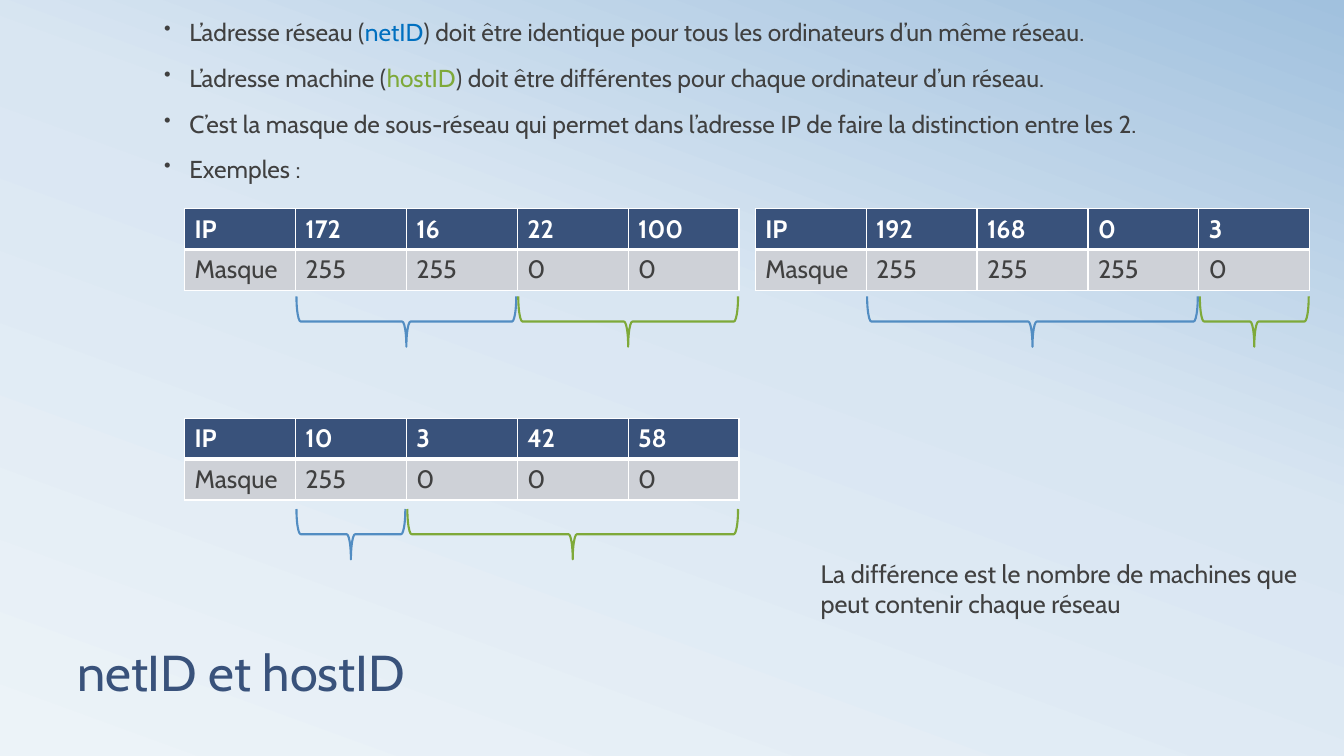
from copy import deepcopy

from lxml.etree import SubElement
from pptx import Presentation
from pptx.dml.color import RGBColor
from pptx.enum.shapes import MSO_SHAPE as Shape
from pptx.enum.text import MSO_ANCHOR as Anchor
from pptx.oxml.ns import qn
from pptx.util import Inches, Pt

FONT = "Cabin"
NAVY, GREY, PALE, WHITE = "39527B", "404040", "CED1D7", "FFFFFF"
NET_BLUE, NET_LINE, HOST_GREEN = "0070C0", "528DC2", "7EA939"
COLUMN, ROW = 1.1, 0.405
BRACE_HEIGHT = 0.5


def rgb(value):
    return RGBColor.from_string(value)


class SlideBuilder:
    def __init__(self, slide):
        self.slide = slide

    def background(self, stops, angle):
        fill = self.slide.background.fill
        fill.gradient()
        fill.gradient_angle = angle
        stop_list = next(self.slide.element.iter(qn("a:gsLst")))
        while len(stop_list) < len(stops):
            stop_list.append(deepcopy(stop_list[0]))
        for stop, (position, color) in zip(fill.gradient_stops, stops):
            stop.position = position
            stop.color.rgb = rgb(color)

    def add_pieces(self, paragraph, pieces, size, bold=False, **formats):
        """Fill a paragraph with (text, colour) pieces."""
        for name, value in formats.items():
            setattr(paragraph, name, value)
        for text, color in pieces:
            run = paragraph.add_run()
            run.text = text
            for name, value in {"name": FONT, "size": Pt(size), "bold": bold}.items():
                setattr(run.font, name, value)
            run.font.color.rgb = rgb(color)

    def text(self, box, paragraphs, size, anchor=Anchor.TOP, bullet=False, **formats):
        frame = self.slide.shapes.add_textbox(*map(Inches, box)).text_frame
        frame.word_wrap = True
        frame.vertical_anchor = anchor
        for index, pieces in enumerate(paragraphs):
            paragraph = frame.add_paragraph() if index else frame.paragraphs[0]
            self.add_pieces(paragraph, pieces, size, **formats)
            if bullet:
                self.bullet(paragraph)

    def bullet(self, paragraph):
        properties = paragraph._p.get_or_add_pPr()
        properties.set("marL", str(Inches(0.25)))
        properties.set("indent", str(-Inches(0.25)))
        color = SubElement(properties, qn("a:buClr"))
        SubElement(color, qn("a:srgbClr"), val=GREY)
        SubElement(properties, qn("a:buSzPct"), val="80000")
        SubElement(properties, qn("a:buChar"), char="•")

    def borders(self, cell, top, bottom):
        properties = cell._tc.get_or_add_tcPr()
        for side, width in {"L": 1, "R": 1, "T": top, "B": bottom}.items():
            line = SubElement(properties, qn(f"a:ln{side}"), w=str(Pt(width)))
            fill = SubElement(line, qn("a:solidFill"))
            SubElement(fill, qn("a:srgbClr"), val=WHITE)

    def table(self, left, top, rows):
        size = len(rows), len(rows[0])
        box = left, top, size[1] * COLUMN, size[0] * ROW
        table = self.slide.shapes.add_table(*size, *map(Inches, box)).table
        styles = [(NAVY, WHITE, True, 1, 3), (PALE, GREY, False, 3, 1)]
        for r, (values, style) in enumerate(zip(rows, styles)):
            fill, color, bold, upper, lower = style
            for c, value in enumerate(values):
                cell = table.cell(r, c)
                self.borders(cell, upper, lower)
                cell.fill.solid()
                cell.fill.fore_color.rgb = rgb(fill)
                self.add_pieces(cell.text_frame.paragraphs[0], [(value, color)], 18, bold)

    def brace(self, left, top, width, color):
        """Draw a brace that opens upward; its frame is given as seen, after rotation."""
        x = left + (width - BRACE_HEIGHT) / 2
        y = top + (BRACE_HEIGHT - width) / 2
        box = map(Inches, (x, y, BRACE_HEIGHT, width))
        brace = self.slide.shapes.add_shape(Shape.RIGHT_BRACE, *box)
        brace.rotation = 90
        brace.shadow.inherit = False
        brace.fill.background()
        brace.line.color.rgb = rgb(color)
        brace.line.width = Pt(1.5)

    def address(self, left, top, ip, mask, gap):
        """Show an IP address over its mask, with braces under netID and hostID."""
        self.table(left, top, [["IP", *ip.split(".")], ["Masque", *mask.split(".")]])
        net = mask.split(".").count("255")
        for first, count, color in [(1, net, NET_LINE), (1 + net, 4 - net, HOST_GREEN)]:
            self.brace(left + first * COLUMN + 0.01, top + 2 * ROW + gap,
                       count * COLUMN - 0.02, color)


def main():
    deck = Presentation()
    deck.slide_width, deck.slide_height = Inches(13.33), Inches(7.5)
    page = SlideBuilder(deck.slides.add_slide(deck.slide_layouts[6]))
    page.background([(0, "ECF3F8"), (0.58, "D9E6F2"), (1, "A1C1DE")], angle=70)
    page.text((0.67, 5.84, 12, 1.17), [[("netID et hostID", NAVY)]], 36,
              anchor=Anchor.BOTTOM, line_spacing=0.8)
    rules = [
        [("L’adresse réseau (", GREY), ("netID", NET_BLUE),
         (") doit être identique pour tous les ordinateurs d’un même réseau.", GREY)],
        [("L’adresse machine (", GREY), ("hostID", HOST_GREEN),
         (") doit être différentes pour chaque ordinateur d’un réseau.", GREY)],
        [("C’est la masque de sous-réseau qui permet dans l’adresse IP "
          "de faire la distinction entre les 2.", GREY)],
        [("Exemples :", GREY)],
    ]
    page.text((1.53, 0.2, 10.36, 1.87), rules, 17.5, bullet=True,
              line_spacing=0.7, space_before=Pt(18))
    for example in [
        (1.83, 2.07, "172.16.22.100", "255.255.0.0", 0.06),
        (7.49, 2.07, "192.168.0.3", "255.255.255.0", 0.06),
        (1.83, 4.15, "10.3.42.58", "255.0.0.0", 0.09),
    ]:
        page.address(*example)
    difference = "La différence est le nombre de machines que peut contenir chaque réseau"
    page.text((8.04, 5.49, 5.29, 0.71), [[(difference, GREY)]], 18)
    deck.save("out.pptx")


if __name__ == "__main__":
    main()
